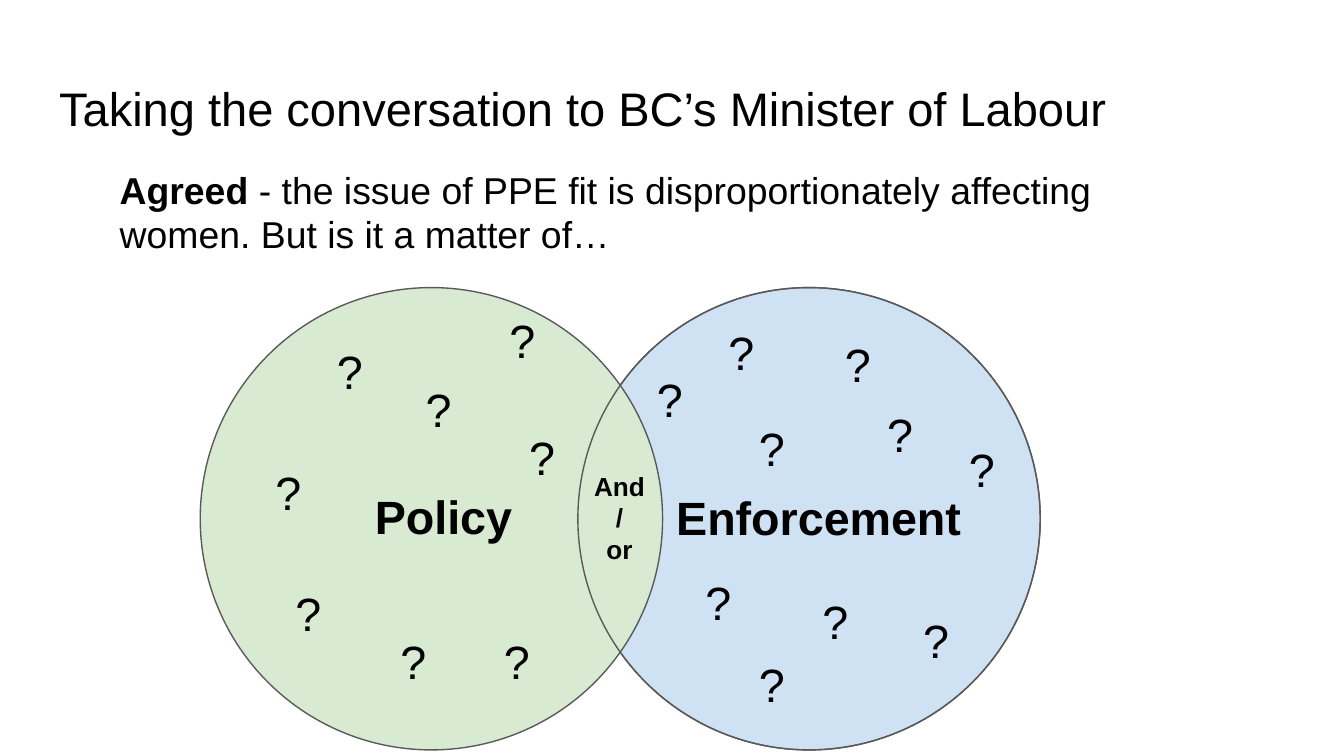
from collections import namedtuple
from dataclasses import dataclass

import pptx
import pptx.dml.color
import pptx.enum.shapes
import pptx.enum.text
import pptx.oxml.ns
import pptx.util
from lxml import etree

Box = namedtuple("Box", "x y w h")  # inches
ALIGN = pptx.enum.text.PP_ALIGN


@dataclass(frozen=True)
class Theme:
    font: str = "Arial"
    ink: str = "000000"
    outline: str = "595959"
    policy: str = "D9EAD3"
    enforcement: str = "CFE2F3"
    title: float = 25.2
    body: float = 20
    label: float = 25
    overlap: float = 14
    inset: float = 0.1


THEME = Theme()
SLIDE = Box(0, 0, 10, 10 * 9 / 16)

# Offsets of the question marks, in percent of the circle's diameter
POLICY_MARKS = [(17.7, 61.3), (40.4, 71.8), (45.9, 17.2), (68.3, 27.6),
                (13.4, 35.2), (26.7, 9), (62.8, 71.8), (64, 2.3)]
ENFORCEMENT_MARKS = [(54.9, 7.6), (64, 22.7), (81.7, 30.2), (14.2, 15.1), (36.3, 25.6),
                     (29.7, 4.9), (24.7, 59), (36.3, 76.7), (71.8, 67.2), (50, 63.1)]


def rgb(code):
    return pptx.dml.color.RGBColor.from_string(code)


def share(box, x, y, w, h):
    """Return the part of a box given in percent of its size."""
    return Box(box.x + x * box.w / 100, box.y + y * box.h / 100,
               w * box.w / 100, h * box.h / 100)


def emu(box):
    return [pptx.util.Inches(v) for v in box]


def put_text(sp, paragraphs, size=THEME.label, bold=False, align=ALIGN.LEFT):
    """Fill a shape; each paragraph is a string or a list of (text, bold) runs."""
    tf = sp.text_frame
    tf.word_wrap = True
    tf.auto_size = pptx.enum.text.MSO_AUTO_SIZE.NONE
    tf.vertical_anchor = pptx.enum.text.MSO_ANCHOR.TOP
    tf.margin_left = tf.margin_right = pptx.util.Inches(THEME.inset)
    tf.margin_top = tf.margin_bottom = pptx.util.Inches(THEME.inset)
    for i, runs in enumerate(paragraphs):
        p = tf.paragraphs[0] if i == 0 else tf.add_paragraph()
        p.alignment = align
        p.line_spacing = 1.0
        p.space_before = p.space_after = pptx.util.Pt(0)
        for text, strong in [(runs, bold)] if isinstance(runs, str) else runs:
            r = p.add_run()
            r.text = text
            r.font.name = THEME.font
            r.font.size = pptx.util.Pt(size)
            r.font.bold = strong
            r.font.color.rgb = rgb(THEME.ink)


def add_text(s, box, *paragraphs, **style):
    put_text(s.shapes.add_textbox(*emu(box)), paragraphs, **style)


def fill_placeholder(sp, box, *paragraphs, **style):
    sp.left, sp.top, sp.width, sp.height = emu(box)
    put_text(sp, paragraphs, **style)


def add_circle(s, box, fill=None):
    sp = s.shapes.add_shape(pptx.enum.shapes.MSO_SHAPE.OVAL, *emu(box))
    sp.shadow.inherit = False
    if fill:
        sp.fill.solid()
        sp.fill.fore_color.rgb = rgb(fill)
    else:
        sp.fill.background()
    sp.line.color.rgb = rgb(THEME.outline)
    sp.line.width = pptx.util.Pt(0.75)


def add_heading(s, box):
    """Title and lead sentence, in the layout's placeholders."""
    title, body = s.shapes.title, s.placeholders[1]
    fill_placeholder(title, share(box, 0, 0, 100, 41.2),
                     "Taking the conversation to BC’s Minister of Labour", size=THEME.title)
    fill_placeholder(body, share(box, 4.83, 42.5, 90.8, 57.5),
                     [("Agreed", True),
                      (" - the issue of PPE fit is disproportionately affecting women. "
                       "But is it a matter of…", False)], size=THEME.body)
    # The lead sentence has no bullet or hanging indent
    pPr = body.text_frame.paragraphs[0]._p.get_or_add_pPr()
    pPr.set("marL", "0")
    pPr.set("indent", "0")
    etree.SubElement(pPr, pptx.oxml.ns.qn("a:buNone"))


def add_marks(s, circle, offsets):
    for x, y in offsets:
        add_text(s, share(circle, x, y, 13.7, 18), "?")


def add_venn(s, box):
    """Two overlapping circles as tall as the box, at its left and right ends."""
    d = box.h
    policy = Box(box.x, box.y, d, d)
    enforcement = Box(box.x + box.w - d, box.y, d, d)
    overlap = Box(enforcement.x, box.y, 2 * d - box.w, d)

    # The last outline completes the edge inside the overlap
    add_circle(s, enforcement, THEME.enforcement)
    add_circle(s, policy, THEME.policy)
    add_circle(s, enforcement)

    # Labels
    add_text(s, share(policy, 34.9, 40.4, 41.6, 18), "Policy", bold=True)
    add_text(s, share(enforcement, 18.4, 40.7, 73, 18), "Enforcement", bold=True)
    add_text(s, share(overlap, 0, 36.6, 98.4, 26.5), "And", "/", "or",
             size=THEME.overlap, bold=True, align=ALIGN.CENTER)

    # Question marks
    add_marks(s, policy, POLICY_MARKS)
    add_marks(s, enforcement, ENFORCEMENT_MARKS)


def main():
    prs = pptx.Presentation()
    prs.slide_width, prs.slide_height = emu(SLIDE)[2:]
    s = prs.slides.add_slide(prs.slide_layouts[1])
    add_heading(s, Box(.34, .49, 9.32, 1.53))
    add_venn(s, Box(1.49, 2.14, 6.25, 3.44))
    prs.save("out.pptx")


if __name__ == "__main__":
    main()
